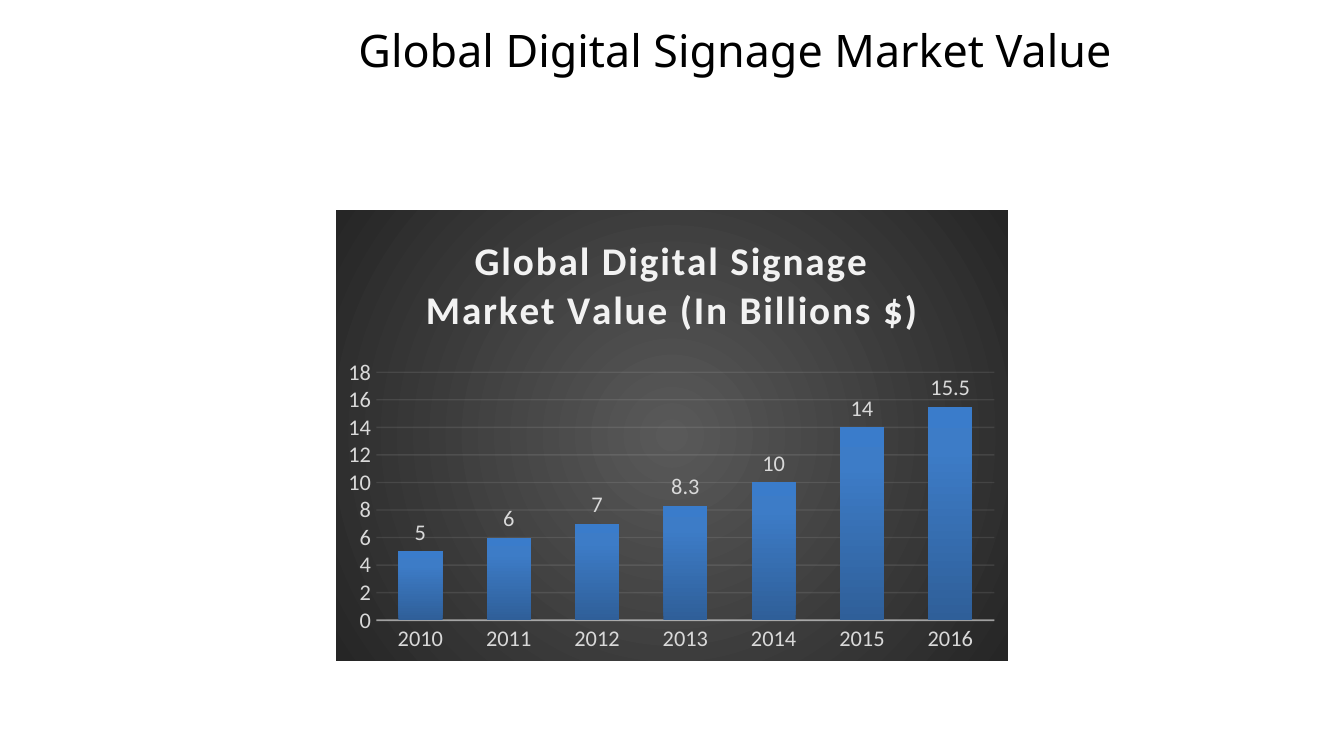
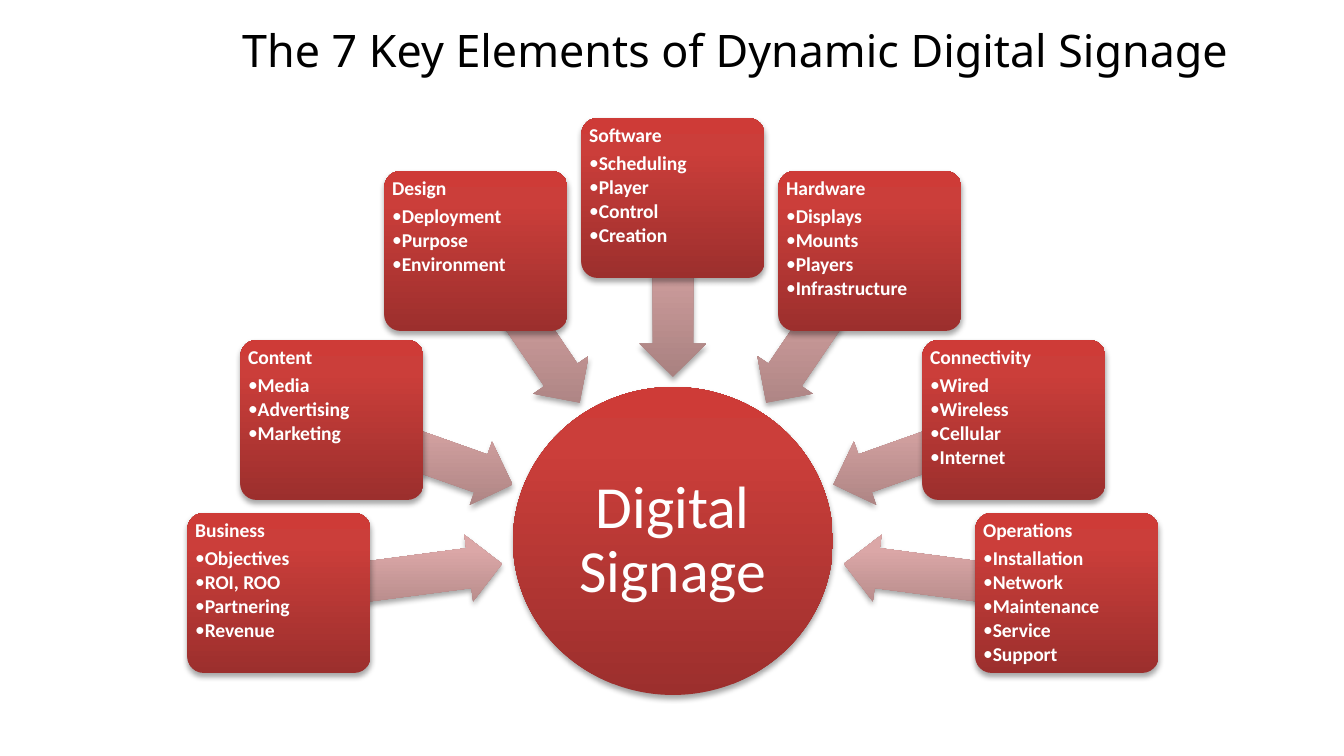
from lxml import etree
from pptx import Presentation
from pptx.chart.data import CategoryChartData
from pptx.dml.color import RGBColor
from pptx.enum.chart import XL_CHART_TYPE, XL_LABEL_POSITION, XL_TICK_MARK
from pptx.enum.shapes import MSO_SHAPE
from pptx.enum.text import MSO_ANCHOR, PP_ALIGN
from pptx.oxml import parse_xml
from pptx.oxml.ns import nsdecls, qn
from pptx.util import Pt

COLUMN = XL_CHART_TYPE.COLUMN_CLUSTERED
OUTSIDE = XL_LABEL_POSITION.OUTSIDE_END
NO_TICK = XL_TICK_MARK.NONE
ELLIPSE, ARROW, CARD = MSO_SHAPE.OVAL, MSO_SHAPE.LEFT_ARROW, MSO_SHAPE.ROUNDED_RECTANGLE
TOP, MIDDLE = MSO_ANCHOR.TOP, MSO_ANCHOR.MIDDLE
LEFT, CENTER = PP_ALIGN.LEFT, PP_ALIGN.CENTER

PX = 914400 / 134.4
WIDTH, HEIGHT = 1344, 756
HUB_X = 673
TITLE_FONT, BODY_FONT = "Noto Sans", "Calibri"
BLACK, WHITE, PALE, GREY = "000000", "FFFFFF", "F2F2F2", "D9D9D9"
RED = [(0, "9C2F2D"), (80, "CB3E3A"), (100, "CE3B37")]
PINK = [(0, "A98180"), (80, "DBA7A7"), (100, "DDA7A6")]
BLUE = [(0, "2F5F99"), (80, "3D7CC7"), (100, "3A7CCB")]
CHARCOAL = [(0, "595959"), (100, "262626")]
UPWARD = '<a:lin ang="16200000" scaled="0"/>'
RADIAL = '<a:path path="circle"><a:fillToRect l="50000" t="50000" r="50000" b="50000"/></a:path>'
SHADOW = (
    f'<a:effectLst {nsdecls("a")}><a:outerShdw blurRad="39400" dist="23000" dir="5400000" '
    'rotWithShape="0"><a:srgbClr val="000000"><a:alpha val="35000"/></a:srgbClr>'
    '</a:outerShdw></a:effectLst>'
)


def rgb(color):
    return RGBColor.from_string(color)


def gradient(spPr, stops, direction):
    gs = "".join(f'<a:gs pos="{pos * 1000}"><a:srgbClr val="{rgb(c)}"/></a:gs>' for pos, c in stops)
    fill = parse_xml(
        f'<a:gradFill {nsdecls("a")} rotWithShape="0"><a:gsLst>{gs}</a:gsLst>{direction}</a:gradFill>'
    )
    spPr.replace(spPr.find(qn("a:solidFill")), fill)


prs = Presentation()
prs.slide_width, prs.slide_height = int(WIDTH * PX), int(HEIGHT * PX)

slides = []
for text in ["Global Digital Signage Market Value", "The 7 Key Elements of Dynamic Digital Signage"]:
    s = prs.slides.add_slide(prs.slide_layouts[5])
    title = s.shapes.title
    title.left, title.top, title.width, title.height = [int(v * PX) for v in (135, 15, 1200, 70)]
    tf = title.text_frame
    tf.vertical_anchor = MIDDLE
    p = tf.paragraphs[0]
    p.alignment = CENTER
    r = p.add_run()
    r.text = text
    r.font.name, r.font.size, r.font.color.rgb = TITLE_FONT, Pt(24), rgb(BLACK)
    slides.append(s)
market, elements = slides

data = CategoryChartData()
data.categories = ["2010", "2011", "2012", "2013", "2014", "2015", "2016"]
data.add_series("Series 1", [5, 6, 7, 8.3, 10, 14, 15.5])
box = [int(v * PX) for v in (336, 210, 672, 451)]
chart = market.shapes.add_chart(COLUMN, *box, data).chart
chart.has_legend = False
chart.font.name, chart.font.size = BODY_FONT, Pt(10)

spPr = parse_xml(f'<c:spPr {nsdecls("c", "a")}><a:solidFill/><a:ln><a:noFill/></a:ln></c:spPr>')
chart.element.find(qn("c:chart")).addnext(spPr)
gradient(spPr, CHARCOAL, RADIAL)

p = chart.chart_title.text_frame.paragraphs[0]
r = p.add_run()
r.text = "Global Digital Signage Market Value (In Billions $)"
r.font.name, r.font.size, r.font.bold = BODY_FONT, Pt(21), True
r.font.color.rgb = rgb(PALE)
r.font._element.set("spc", "100")

plot_area = chart.element.find(f".//{qn('c:plotArea')}")
for old in plot_area.findall(qn("c:layout")):
    plot_area.remove(old)
plot_area.insert(0, parse_xml(
    f'<c:layout {nsdecls("c")}><c:manualLayout><c:layoutTarget val="inner"/>'
    '<c:xMode val="edge"/><c:yMode val="edge"/><c:x val="0.06"/><c:y val="0.36"/>'
    '<c:w val="0.92"/><c:h val="0.55"/></c:manualLayout></c:layout>'
))

cat, val = chart.category_axis, chart.value_axis
val.minimum_scale, val.maximum_scale, val.major_unit = 0, 18, 2
val.format.line.fill.background()
for axis in (cat, val):
    axis.major_tick_mark = axis.minor_tick_mark = NO_TICK
    font = axis.tick_labels.font
    font.name, font.size, font.color.rgb = BODY_FONT, Pt(12), rgb(GREY)
for axis, line, width, parent, alpha in [
    (cat, cat.format.line, 1, "c:spPr", 54),
    (val, val.major_gridlines.format.line, 0.75, "c:majorGridlines", 10),
]:
    line.width, line.color.rgb = Pt(width), rgb(PALE)
    color = axis._element.find(f"{qn(parent)}//{qn('a:srgbClr')}")
    etree.SubElement(color, qn("a:alpha")).set("val", str(alpha * 1000))

plot = chart.plots[0]
plot.gap_width, plot.overlap, plot.vary_by_categories = 100, -24, False
series = plot.series[0]
series.format.fill.solid()
gradient(series._element.spPr, BLUE, UPWARD)
labels = series.data_labels
labels.show_value, labels.position = True, OUTSIDE
labels.font.name, labels.font.size, labels.font.color.rgb = BODY_FONT, Pt(12), rgb(GREY)

CARD_W, CARD_H, ARROW_H = 183, 160, 67
left_spots = [
    (-394, 513, -283, 578, 226, 172.5),
    (-341, 340, -251, 452, 192, 199.5),
    (-197, 171, -145, 326, 184, 235.8),
]
right_spots = [
    (-card_dx, card_y, -arrow_dx, arrow_y, length, (180 - angle) % 360)
    for card_dx, card_y, arrow_dx, arrow_y, length, angle in reversed(left_spots)
]
spots = left_spots + [(0, 118, 0, 287, 179, 270)] + right_spots
cards = [
    ("Business", ["Objectives", "ROI, ROO", "Partnering", "Revenue"]),
    ("Content", ["Media", "Advertising", "Marketing"]),
    ("Design", ["Deployment", "Purpose", "Environment"]),
    ("Software", ["Scheduling", "Player", "Control", "Creation"]),
    ("Hardware", ["Displays", "Mounts", "Players", "Infrastructure"]),
    ("Connectivity", ["Wired", "Wireless", "Cellular", "Internet"]),
    ("Operations", ["Installation", "Network", "Maintenance", "Service", "Support"]),
]

parts = [(ELLIPSE, HUB_X, 387, 320, 308, 0, [], RED, "Digital Signage", [])]
for (card_dx, card_y, arrow_dx, arrow_y, length, angle), (head, items) in zip(spots, cards):
    arrow_top = arrow_y - ARROW_H // 2
    parts.append((ARROW, HUB_X + arrow_dx, arrow_top, length, ARROW_H, angle, [0.6, 0.5], PINK, "", []))
    parts.append((CARD, HUB_X + card_dx, card_y, CARD_W, CARD_H, 0, [0.1], RED, head, items))

for kind, cx, top, w, h, angle, adjust, stops, head, items in parts:
    sp = elements.shapes.add_shape(kind, *[int(v * PX) for v in (cx - w / 2, top, w, h)])
    sp.rotation = angle
    for i, value in enumerate(adjust):
        sp.adjustments[i] = value
    sp.fill.solid()
    sp.line.fill.background()
    sp.shadow.inherit = False
    spPr = sp._element.spPr
    gradient(spPr, stops, UPWARD)
    spPr.replace(spPr.find(qn("a:effectLst")), parse_xml(SHADOW))
    if not head:
        continue
    hub = kind == ELLIPSE
    tf = sp.text_frame
    tf.word_wrap = True
    tf.vertical_anchor = MIDDLE if hub else TOP
    tf.margin_left = tf.margin_right = tf.margin_top = tf.margin_bottom = int(3 * PX)
    for i, text in enumerate([head] + items):
        p = tf.add_paragraph() if i else tf.paragraphs[0]
        p.alignment = CENTER if hub else LEFT
        p.line_spacing = 0.9
        p.space_after = Pt(1.5 if i else 3.5)
        if i:
            p.level = 1
            pPr = p._p.get_or_add_pPr()
            pPr.set("marL", str(int(8 * PX)))
            pPr.set("indent", str(int(-8 * PX)))
            etree.SubElement(pPr, qn("a:buFont")).set("typeface", BODY_FONT)
            etree.SubElement(pPr, qn("a:buChar")).set("char", "•")
        r = p.add_run()
        r.text = text
        r.font.name, r.font.size = BODY_FONT, Pt(32 if hub else 10.5)
        r.font.bold, r.font.color.rgb = not hub, rgb(WHITE)

prs.save("out.pptx")
